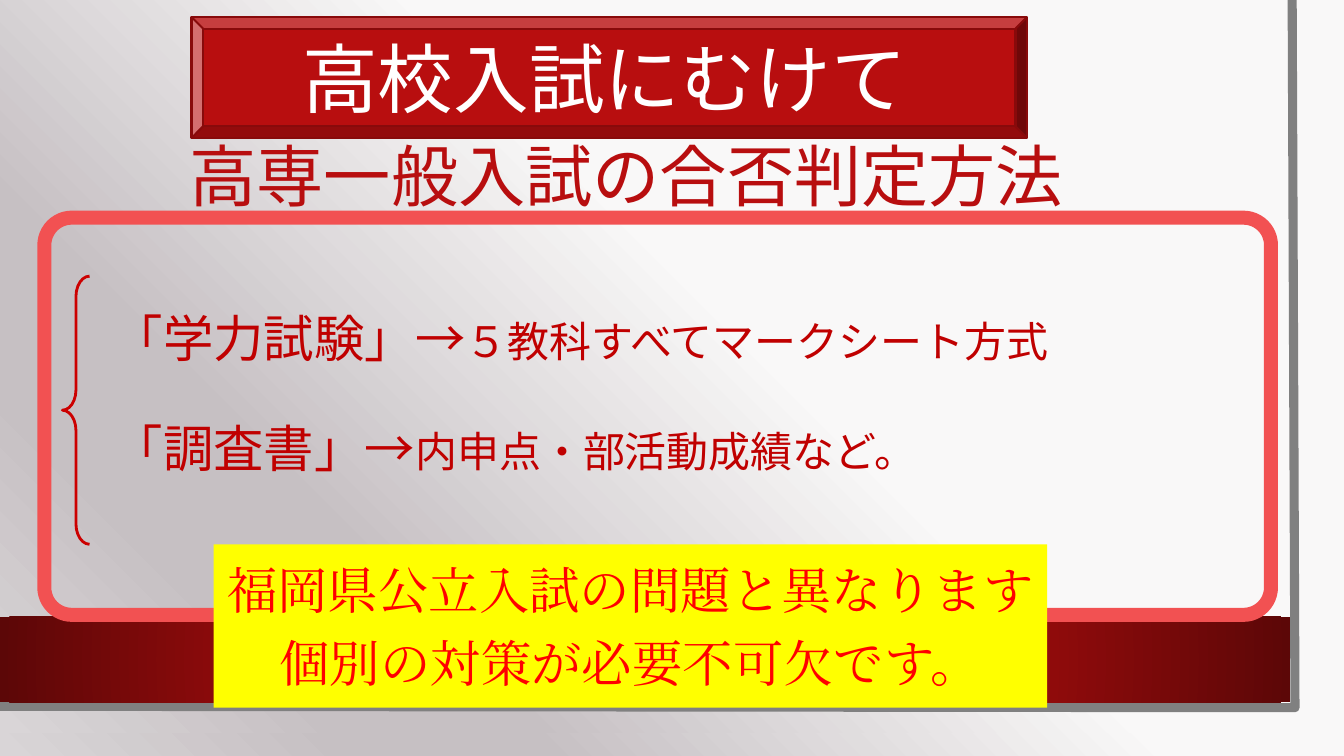
from lxml import etree
from pptx import Presentation
from pptx.dml.color import RGBColor
from pptx.enum.lang import MSO_LANGUAGE_ID
from pptx.enum.shapes import MSO_SHAPE
from pptx.enum.text import MSO_ANCHOR, PP_ALIGN
from pptx.oxml.ns import qn
from pptx.util import Pt

RECT = MSO_SHAPE.RECTANGLE
ROUND = MSO_SHAPE.ROUNDED_RECTANGLE
BEVEL = MSO_SHAPE.BEVEL
BRACE = MSO_SHAPE.LEFT_BRACE
CENTER = PP_ALIGN.CENTER
MIDDLE = MSO_ANCHOR.MIDDLE
JAPAN = MSO_LANGUAGE_ID.JAPANESE

SANS = "Noto Sans CJK JP"
SERIF = "Times New Roman"
COLOR = {
    "red": "B80E0F", "dark": "5C0707", "edge": "880A0B", "coral": "F25152",
    "brace": "CC0000", "text": "C00000", "alert": "FF0000",
    "yellow": "FFFF00", "white": "FFFFFF", "gray": "808080",
    "light": "F9F8F8", "mist": "C6C0C3", "haze": "D9D5D7",
}
PAPER = [(44, "light"), (74, "mist"), (83, "mist"), (100, "haze")]
GLOW = [(34, "red"), (100, "dark")]


def rgb(name):
    return RGBColor.from_string(COLOR[name])


def shade(fill, owner, stops, angle=None):
    fill.gradient()
    grad = owner.element.find(".//" + qn("a:gradFill"))
    for child in list(grad):
        grad.remove(child)
    rows = etree.SubElement(grad, qn("a:gsLst"))
    for pos, name in stops:
        stop = etree.SubElement(rows, qn("a:gs"), pos=str(pos * 1000))
        etree.SubElement(stop, qn("a:srgbClr"), val=COLOR[name])
    if angle is not None:
        etree.SubElement(grad, qn("a:lin"), ang=str(angle * 60000), scaled="0")
    else:
        ring = etree.SubElement(grad, qn("a:path"), path="circle")
        sides = dict.fromkeys("ltrb", "50000")
        etree.SubElement(ring, qn("a:fillToRect"), **sides)


def paint(shape, fill=None, line=None, width=0):
    shape.shadow.inherit = False
    if fill:
        shape.fill.solid()
        shape.fill.fore_color.rgb = rgb(fill)
    else:
        shape.fill.background()
    if line:
        shape.line.color.rgb = rgb(line)
        shape.line.width = Pt(width)
    else:
        shape.line.fill.background()


def add_box(slide, kind, box, fill=None, line=None, width=0, adjust=()):
    shape = slide.shapes.add_shape(kind, *map(Pt, box))
    for i, value in enumerate(adjust):
        shape.adjustments[i] = value
    paint(shape, fill, line, width)
    return shape


def style(run, size, color, face=SANS):
    font = run.font
    font.size = Pt(size)
    font.name = face
    font.color.rgb = rgb(color)
    font.language_id = JAPAN
    latin = run._r.rPr.find(qn("a:latin"))
    latin.addnext(latin.makeelement(qn("a:ea"), {"typeface": face}))


def write(shape, lines, size, color, face=SANS, gap=0):
    frame = shape.text_frame
    frame.text = "\n".join(lines)
    frame.vertical_anchor = MIDDLE
    for i, para in enumerate(frame.paragraphs):
        para.alignment = CENTER
        if i:
            para.space_before = Pt(gap)
        for run in para.runs:
            style(run, size, color, face)
    return frame


def add_frame(slide):
    start, *rest = [(923, 0), (925, 505.5), (-2, 504.5)]
    path = slide.shapes.build_freeform(*map(Pt, start))
    path.add_line_segments([(Pt(x), Pt(y)) for x, y in rest], close=False)
    paint(path.convert_to_shape(), line="gray", width=6.5)


def add_title(slide, text):
    title = slide.shapes.title
    title.element.getparent().append(title.element)
    title.left, title.top, title.width, title.height = map(
        Pt, (48.2, 89.3, 798.5, 77.8))
    frame = write(title, [text], 48, "red")
    frame.paragraphs[0].line_spacing = 0.9


def add_list(shape, items):
    frame = shape.text_frame
    frame.word_wrap = True
    frame.vertical_anchor = MIDDLE
    frame.margin_right = 0
    frame.margin_bottom = Pt(38)
    for i, (head, detail) in enumerate(items):
        para = frame.add_paragraph() if i else frame.paragraphs[0]
        para.alignment = PP_ALIGN.LEFT
        para._p.get_or_add_pPr().set("marL", str(Pt(36)))
        if i:
            para.space_before = Pt(35)
        for text, size in ((head, 36), (detail, 30)):
            run = para.add_run()
            run.text = text
            style(run, size, "text")


def main():
    deck = Presentation()
    deck.slide_width, deck.slide_height = Pt(960), Pt(540)
    slide = deck.slides.add_slide(deck.slide_layouts[5])
    shade(slide.background.fill, slide, PAPER, 135)

    sheet = add_box(slide, RECT, (0, 0, 943.2, 523.4))
    shade(sheet.fill, sheet, PAPER, 135)
    add_frame(slide)
    band = add_box(slide, RECT, (0, 440.6, 921.6, 61.2))
    shade(band.fill, band, GLOW)

    add_box(slide, BEVEL, (136.8, 12.2, 596.9, 86.4),
            "red", "edge", 1.5, [0.096])
    head = slide.shapes.add_textbox(*map(Pt, (206.6, 18.7, 450.7, 72.7)))
    write(head, ["高校入試にむけて"], 54, "white").word_wrap = False
    add_title(slide, "高専一般入試の合否判定方法")

    panel = add_box(slide, ROUND, (31.7, 155.5, 876.2, 283.7),
                    None, "coral", 10, [0.069])
    add_list(panel, [
        ("「学力試験」→", "５教科すべてマークシート方式"),
        ("「調査書」→", "内申点・部活動成績など。"),
    ])
    add_box(slide, BRACE, (44.6, 197.3, 19.4, 191.5),
            None, "brace", 2, [0.748, 0.5])

    note = add_box(slide, RECT, (152.6, 388.8, 595.4, 116.6), "yellow")
    write(note, ["福岡県公立入試の問題と異なります", "個別の対策が必要不可欠です。"],
          36, "alert", SERIF, 9)
    deck.save("out.pptx")


if __name__ == "__main__":
    main()
